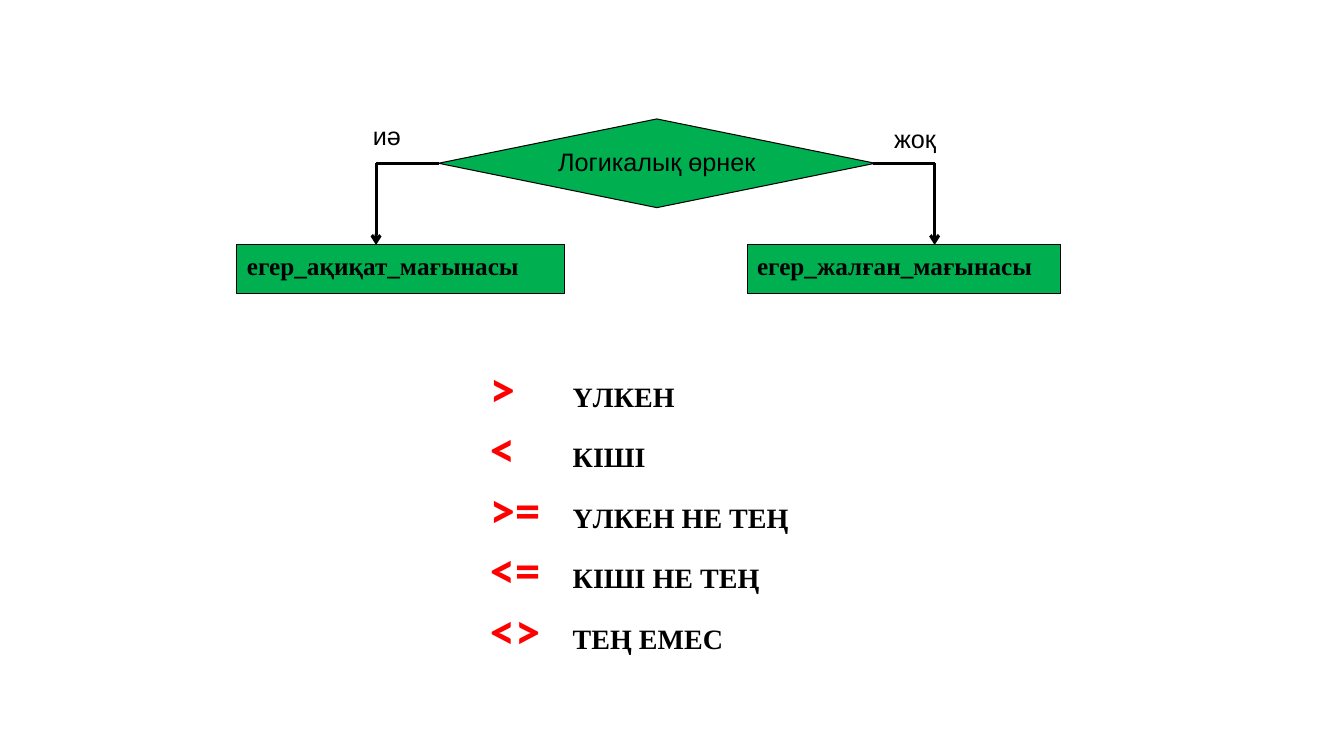
"""Builds a slide with a yes/no decision flowchart and a list of comparison operators."""
from lxml.etree import SubElement
from pptx import Presentation
from pptx.dml.color import RGBColor
from pptx.enum.shapes import MSO_CONNECTOR as Connector, MSO_SHAPE as Shape
from pptx.enum.text import MSO_ANCHOR as Anchor, MSO_AUTO_SIZE as AutoSize, PP_ALIGN as Align
from pptx.oxml.ns import qn
from pptx.util import Pt

PX = 9144
GREEN, BLACK, RED = "00B050", "000000", "FF0000"


def paint(color_format, color):
    color_format.rgb = RGBColor.from_string(color)


def add_run(paragraph, text, font, size, bold=False, color=BLACK):
    run = paragraph.add_run()
    run.text = text
    for name, value in {"name": font, "size": Pt(size), "bold": bold}.items():
        setattr(run.font, name, value)
    paint(run.font.color, color)


presentation = Presentation()
presentation.slide_width, presentation.slide_height = 1333 * PX, 750 * PX
slide = presentation.slides.add_slide(presentation.slide_layouts[1])
title = slide.shapes.title
title.element.getparent().remove(title.element)

flow_nodes = [
    (Shape.FLOWCHART_DECISION, (435, 118, 433, 88), "Логикалық өрнек", "Arial", False, Align.CENTER),
    (Shape.RECTANGLE, (235, 243, 325, 48), "егер_ақиқат_мағынасы", "Times New Roman", True, Align.LEFT),
    (Shape.RECTANGLE, (741, 243, 311, 48), "егер_жалған_мағынасы", "Times New Roman", True, Align.LEFT),
]
for kind, box, text, font, bold, align in flow_nodes:
    shape = slide.shapes.add_shape(kind, *(length * PX for length in box))
    shape.shadow.inherit = False
    shape.fill.solid()
    paint(shape.fill.fore_color, GREEN)
    paint(shape.line.color, BLACK)
    shape.line.width = Pt(0.75)
    shape.text_frame.word_wrap = True
    shape.text_frame.vertical_anchor = Anchor.TOP
    paragraph = shape.text_frame.paragraphs[0]
    paragraph.alignment = align
    add_run(paragraph, text, font, 18, bold)

branches = [
    (435, 373, "иә", 360, 114),
    (866, 927, "жоқ", 877, 117),
]
for diamond_x, branch_x, label, label_x, label_y in branches:
    segments = [
        ((diamond_x, 162, branch_x, 162), 2.5, False),
        ((branch_x, 162, branch_x, 243), 2.25, True),
    ]
    for ends, width, has_arrow in segments:
        connector = slide.shapes.add_connector(Connector.STRAIGHT, *(length * PX for length in ends))
        paint(connector.line.color, BLACK)
        connector.line.width = Pt(width)
        if has_arrow:
            line_properties = connector.element.spPr.find(qn("a:ln"))
            SubElement(line_properties, qn("a:tailEnd"), type="arrow")
        SubElement(connector.element.spPr, qn("a:effectLst"))

    text_box = slide.shapes.add_textbox(label_x * PX, label_y * PX, 86 * PX, 40 * PX)
    text_box.text_frame.word_wrap = True
    add_run(text_box.text_frame.paragraphs[0], label, "Arial", 18)

operators = [
    (">", "ҮЛКЕН"),
    ("<", "КІШІ"),
    (">=", "ҮЛКЕН НЕ ТЕҢ"),
    ("<=", "КІШІ НЕ ТЕҢ"),
    ("<>", "ТЕҢ ЕМЕС"),
]
operator_list = slide.placeholders[1]
placement = {"left": 476, "top": 349, "width": 348, "height": 313}
for name, length in placement.items():
    setattr(operator_list, name, length * PX)
text_frame = operator_list.text_frame
frame_format = {"word_wrap": True, "auto_size": AutoSize.SHAPE_TO_FIT_TEXT, "vertical_anchor": Anchor.TOP}
for name, value in frame_format.items():
    setattr(text_frame, name, value)

for index, (operator, meaning) in enumerate(operators):
    paragraph = text_frame.add_paragraph() if index else text_frame.paragraphs[0]
    paragraph.space_before = Pt(0)
    properties = paragraph._p.get_or_add_pPr()
    for name, length in {"marL": 82, "indent": -82}.items():
        properties.set(name, str(length * PX))
    SubElement(properties, qn("a:buNone"))
    add_run(paragraph, operator + "\t", "Calibri", 36, True, RED)
    add_run(paragraph, meaning, "Times New Roman", 20, True)

presentation.save("out.pptx")
